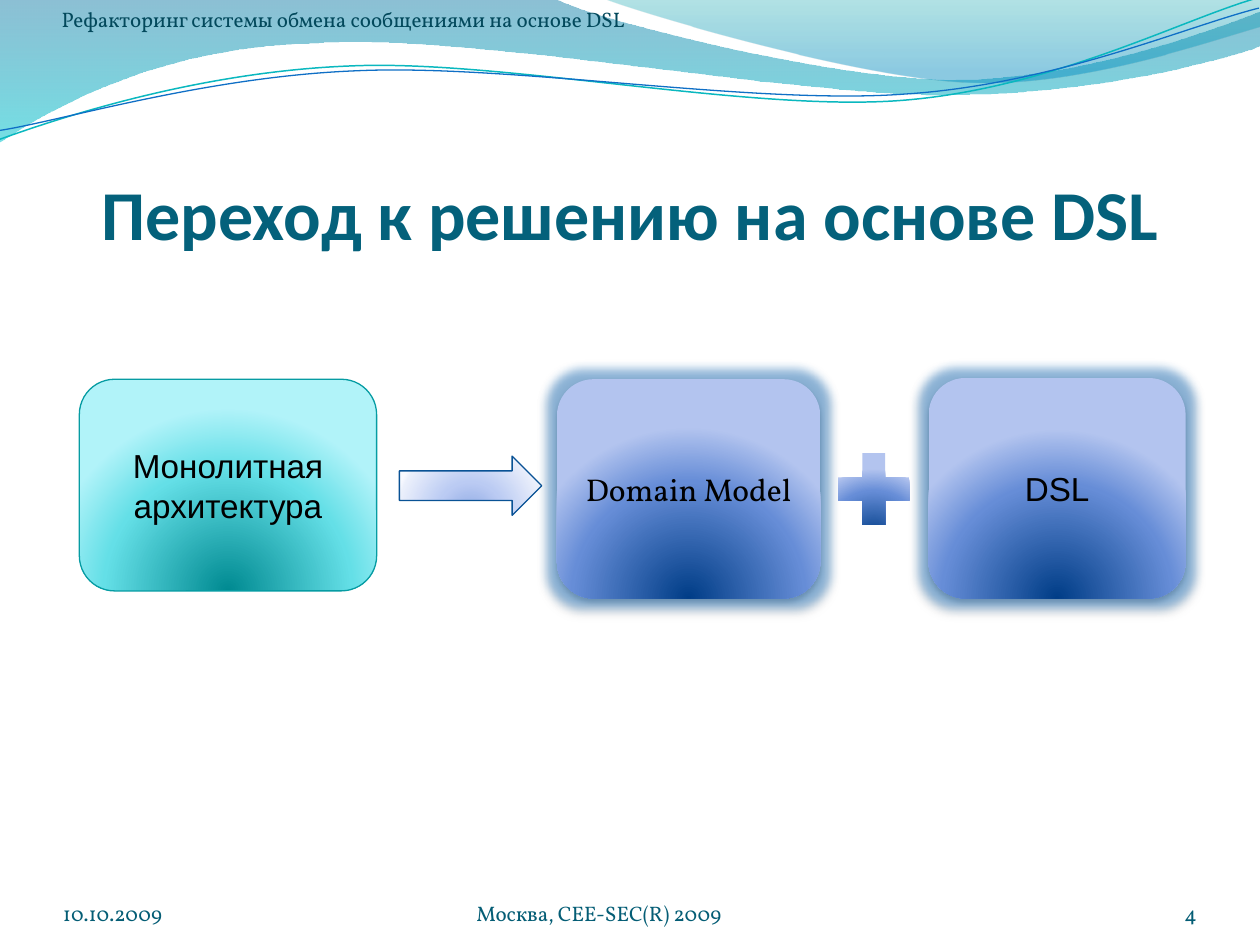
from pptx import Presentation
from pptx import util as u
from pptx.dml.color import RGBColor
from pptx.enum import shapes, text
from pptx.oxml import parse_xml
from pptx.oxml.ns import nsdecls, qn

PX = 9144
MSO, AL, AN = shapes.MSO_SHAPE, text.PP_ALIGN, text.MSO_ANCHOR
T = {
    "title": {"name": "Calibri", "size": 40, "bold": True, "color": "04617B"},
    "footer": {"name": "Vollkorn", "size": 12, "color": "045D75"},
    "header": {"name": "Vollkorn", "size": 12, "color": "03495C"},
    "model": {"name": "Vollkorn", "size": 18, "color": "000000"},
    "box": {"name": "Arial", "size": 19, "color": "000000"},
    "blue": [(0, "003D87", 100), (68, "668DD7", 100), (100, "B3C4EF", 100)],
    "teal": [(0, "008A91", 100), (68, "64DFE7", 100), (100, "B1F3F9", 100)],
    "pale": [(0, "8DA8E3", 100), (43, "BBCBF3", 100), (93, "EAEFFB", 100), (100, "F7F9FF", 100)],
    "wave": [(0, "0074A1", 45), (100, "00C6CF", 55)],
    "crest": [(0, "00A1A9", 30), (80, "008BBF", 45)],
    "glow": ("0F6FC6", 40, 11),
    "soft": ("000000", 35, 3.1, 1.8),
}


def write(tf, line, style, align, anchor, margins=None):
    for k, v in {"word_wrap": True, "vertical_anchor": anchor}.items():
        setattr(tf, k, v)
    for side, m in zip(("left", "top", "right", "bottom"), margins or ()):
        setattr(tf, f"margin_{side}", m * PX)
    p = tf.paragraphs[0]
    p.alignment = align
    r = p.add_run()
    r.text = line
    for k, v in style.items():
        if k == "color":
            r.font.color.rgb = RGBColor.from_string(v)
        else:
            setattr(r.font, k, u.Pt(v) if k == "size" else v)


def paint(sp, stops=None, shade="", line=None, glow=None, shadow=None):
    sp.shadow.inherit = False
    sp.fill.background()
    sp.line.fill.background()
    if line:
        sp.line.color.rgb = RGBColor.from_string(line[0])
        sp.line.width = u.Pt(line[1])
    pr = sp._element.spPr
    if stops:
        gs = "".join(
            f'<a:gs pos="{pos * 1000}"><a:srgbClr val="{c}"><a:alpha val="{a * 1000}"/></a:srgbClr></a:gs>'
            for pos, c, a in stops)
        grad = parse_xml(f'<a:gradFill {nsdecls("a")} rotWithShape="1"><a:gsLst>{gs}</a:gsLst>{shade}</a:gradFill>')
        pr.replace(pr.find(qn("a:noFill")), grad)
    effects = []
    if glow:
        effects.append(("glow", f'rad="{u.Pt(glow[2])}"', glow))
    if shadow:
        attrs = f'blurRad="{u.Pt(shadow[2])}" dist="{u.Pt(shadow[3])}" dir="5400000" rotWithShape="0"'
        effects.append(("outerShdw", attrs, shadow))
    for tag, attrs, (c, a, *_) in effects:
        pr.find(qn("a:effectLst")).append(parse_xml(
            f'<a:{tag} {nsdecls("a")} {attrs}><a:srgbClr val="{c}"><a:alpha val="{a * 1000}"/></a:srgbClr></a:{tag}>'))


DOWN = '<a:lin ang="5400000" scaled="1"/>'
RADIAL = '<a:path path="circle"><a:fillToRect l="50000" t="130000" r="50000" b="-30000"/></a:path>'

prs = Presentation()
prs.slide_width, prs.slide_height = 1000 * PX, 750 * PX
s = prs.slides.add_slide(prs.slide_layouts[6])

waves = [
    ([(0, 0), (440, -1), (476, 17, 664, 63, 758, 63), (853, 63, 958, 26, 1000, 9), (1001, 36),
      (983, 44, 870, 76, 746, 75), (622, 75, 382, 28, 257, 34), (129, 36, 46, 83, -1, 113), (0, 0)],
     0, {"stops": T["wave"], "shade": DOWN}),
    ([(479, -1), (509, 11, 682, 62, 769, 65), (856, 69, 961, 32, 1000, 21), (1000, 0), (479, -1)],
     0, {"stops": T["crest"], "shade": DOWN}),
    ([(-2, 87), (47, 72, 158, 41, 278, 42), (396, 42, 591, 93, 712, 90), (832, 87, 940, 36, 1000, 22)],
     357.3, {"line": ("0AB8BF", 0.85)}),
    ([(-2, 80), (46, 75, 164, 45, 283, 46), (404, 46, 596, 88, 716, 85), (836, 83, 942, 42, 1001, 30)],
     357.3, {"line": ("0F6FC6", 0.75)}),
]
for (start, *segments), turn, look in waves:
    pts = [seg[i:i + 2] for seg in segments for i in range(0, len(seg), 2)]
    fb = s.shapes.build_freeform(*start, scale=PX)
    fb.add_line_segments(pts, close="stops" in look)
    sp = fb.convert_to_shape()
    sp.rotation = turn
    steps = iter(list(sp._element.spPr.iter(qn("a:lnTo"))))
    for seg in segments:
        first = next(steps)
        if len(seg) == 6:
            curve = parse_xml(f'<a:cubicBezTo {nsdecls("a")}/>')
            first.addprevious(curve)
            for step in (first, next(steps), next(steps)):
                curve.append(step[0])
                step.getparent().remove(step)
    paint(sp, **look)

glowing = {"stops": T["blue"], "glow": T["glow"], "shadow": T["soft"]}
diagram = [
    (MSO.RIGHT_ARROW, (317, 362, 113, 47), None, None, {"stops": T["pale"], "line": ("095295", 0.75)}),
    (MSO.ROUNDED_RECTANGLE, (442, 301, 209, 174), "Domain Model", T["model"], glowing),
    (MSO.ROUNDED_RECTANGLE, (63, 301, 236, 168), "Монолитная архитектура", T["box"],
     {"stops": T["teal"], "line": ("069CA3", 0.75)}),
    (MSO.MATH_PLUS, (655, 349, 77, 78), None, None, {"stops": T["blue"]}),
    (MSO.ROUNDED_RECTANGLE, (737, 300, 204, 175), "DSL", T["box"], glowing),
]
for kind, at, label, style, look in diagram:
    sp = s.shapes.add_shape(kind, *(v * PX for v in at))
    paint(sp, shade=RADIAL, **look)
    if label:
        write(sp.text_frame, label, style, AL.CENTER, AN.MIDDLE)

flush = (0, 0, 0, 0)
captions = [
    ((50, 77, 900, 125), "Переход к решению на основе DSL", T["title"], AL.CENTER, AN.BOTTOM, (0, 5, 0, 0)),
    ((50, 695, 233, 40), "10.10.2009", T["footer"], AL.LEFT, AN.BOTTOM, flush),
    ((867, 695, 83, 40), "4", T["footer"], AL.RIGHT, AN.BOTTOM, flush),
    ((292, 695, 367, 40), "Москва, CEE-SEC(R) 2009", T["footer"], AL.CENTER, AN.BOTTOM, flush),
    ((39, 0, 742, 30), "Рефакторинг системы обмена сообщениями на основе DSL", T["header"],
     AL.LEFT, AN.TOP, None),
]
for at, line, style, align, anchor, margins in captions:
    tf = s.shapes.add_textbox(*(v * PX for v in at)).text_frame
    write(tf, line, style, align, anchor, margins)

prs.save("out.pptx")
